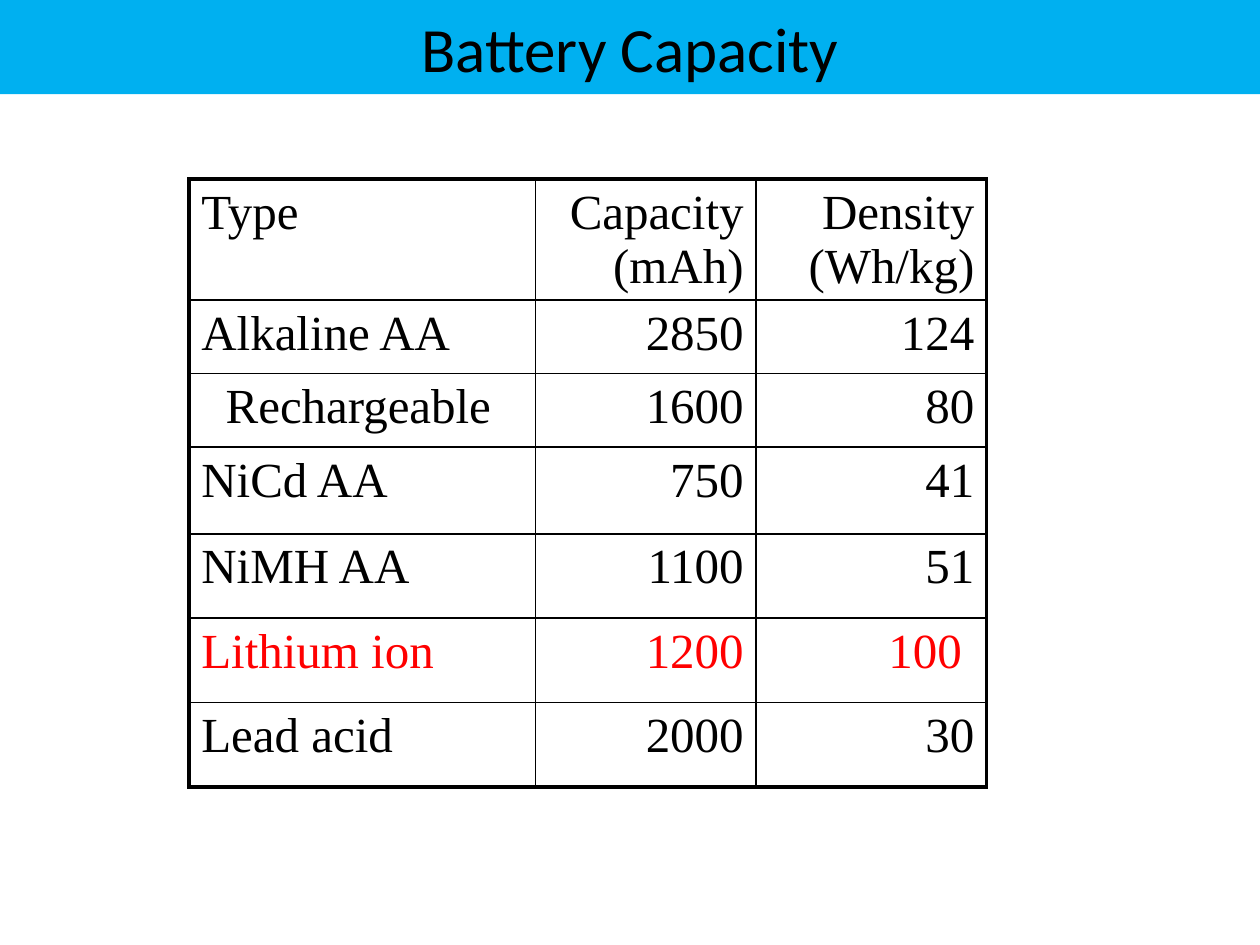
from lxml.etree import SubElement
from pptx import Presentation
from pptx.dml.color import RGBColor
from pptx.enum.text import MSO_ANCHOR, PP_ALIGN
from pptx.oxml.ns import qn
from pptx.util import Cm, Pt

TITLE = "Battery Capacity"
ROWS = [
    ("Type", "Capacity (mAh)", "Density (Wh/kg)"),
    ("Alkaline AA", "2850", "124"),
    ("Rechargeable", "1600", "80"),
    ("NiCd AA", "750", "41"),
    ("NiMH AA", "1100", "51"),
    ("Lithium ion", "1200", "100"),
    ("Lead acid", "2000", "30"),
]
COLUMN_WIDTHS = [6.99, 4.44, 4.65]
ROW_HEIGHTS = [2.42, 1.48, 1.48, 1.75, 1.7, 1.7, 1.7]
HIGHLIGHTED_ROW = 5
LEFT_MARGINS = {(2, 0): 0.74}
RIGHT_MARGINS = {(5, 2): 0.5}
BLACK, RED, SKY = "000000", "FF0000", "00B0F0"
OUTER_LINE, INNER_LINE = 2.25, 1


def color(value):
    return RGBColor.from_string(value)


def format_text(paragraph, font_name, size, font_color, alignment):
    paragraph.alignment = alignment
    for run in paragraph.runs:
        run.font.name = font_name
        run.font.size = Pt(size)
        run.font.color.rgb = color(font_color)


def add_borders(cell, row, column):
    outer_sides = {
        "a:lnL": column == 0,
        "a:lnR": column == len(COLUMN_WIDTHS) - 1,
        "a:lnT": row == 0,
        "a:lnB": row == len(ROWS) - 1,
    }
    properties = cell._tc.get_or_add_tcPr()
    for tag, is_outer in outer_sides.items():
        width = Pt(OUTER_LINE if is_outer else INNER_LINE)
        line = SubElement(properties, qn(tag), w=str(width))
        fill = SubElement(line, qn("a:solidFill"))
        SubElement(fill, qn("a:srgbClr"), val=BLACK)


def add_title(slide, width):
    title = slide.shapes.title
    title.left, title.top, title.width, title.height = 0, 0, width, Cm(1.9)
    title.fill.solid()
    title.fill.fore_color.rgb = color(SKY)
    title.text_frame.text = TITLE
    title.text_frame.vertical_anchor = MSO_ANCHOR.MIDDLE
    format_text(title.text_frame.paragraphs[0], "Calibri", 36, BLACK, PP_ALIGN.CENTER)


def add_battery_table(slide):
    frame = slide.shapes.add_table(
        len(ROWS), len(COLUMN_WIDTHS), Cm(3.81), Cm(3.61),
        Cm(sum(COLUMN_WIDTHS)), Cm(sum(ROW_HEIGHTS)),
    )
    table = frame.table
    table.first_row = False
    table.horz_banding = False
    for column, width in zip(table.columns, COLUMN_WIDTHS):
        column.width = Cm(width)
    for row, height in zip(table.rows, ROW_HEIGHTS):
        row.height = Cm(height)
    for row, values in enumerate(ROWS):
        font_color = RED if row == HIGHLIGHTED_ROW else BLACK
        for column, value in enumerate(values):
            cell = table.cell(row, column)
            cell.margin_left = Cm(LEFT_MARGINS.get((row, column), 0.25))
            cell.margin_right = Cm(RIGHT_MARGINS.get((row, column), 0.25))
            add_borders(cell, row, column)
            cell.fill.background()
            cell.text_frame.text = value
            alignment = PP_ALIGN.RIGHT if column else PP_ALIGN.LEFT
            format_text(cell.text_frame.paragraphs[0], "Times New Roman", 28, font_color, alignment)


def main():
    presentation = Presentation()
    presentation.slide_width, presentation.slide_height = Cm(25.4), Cm(19.05)
    slide = presentation.slides.add_slide(presentation.slide_layouts[5])
    add_title(slide, presentation.slide_width)
    add_battery_table(slide)
    presentation.save("out.pptx")


if __name__ == "__main__":
    main()
